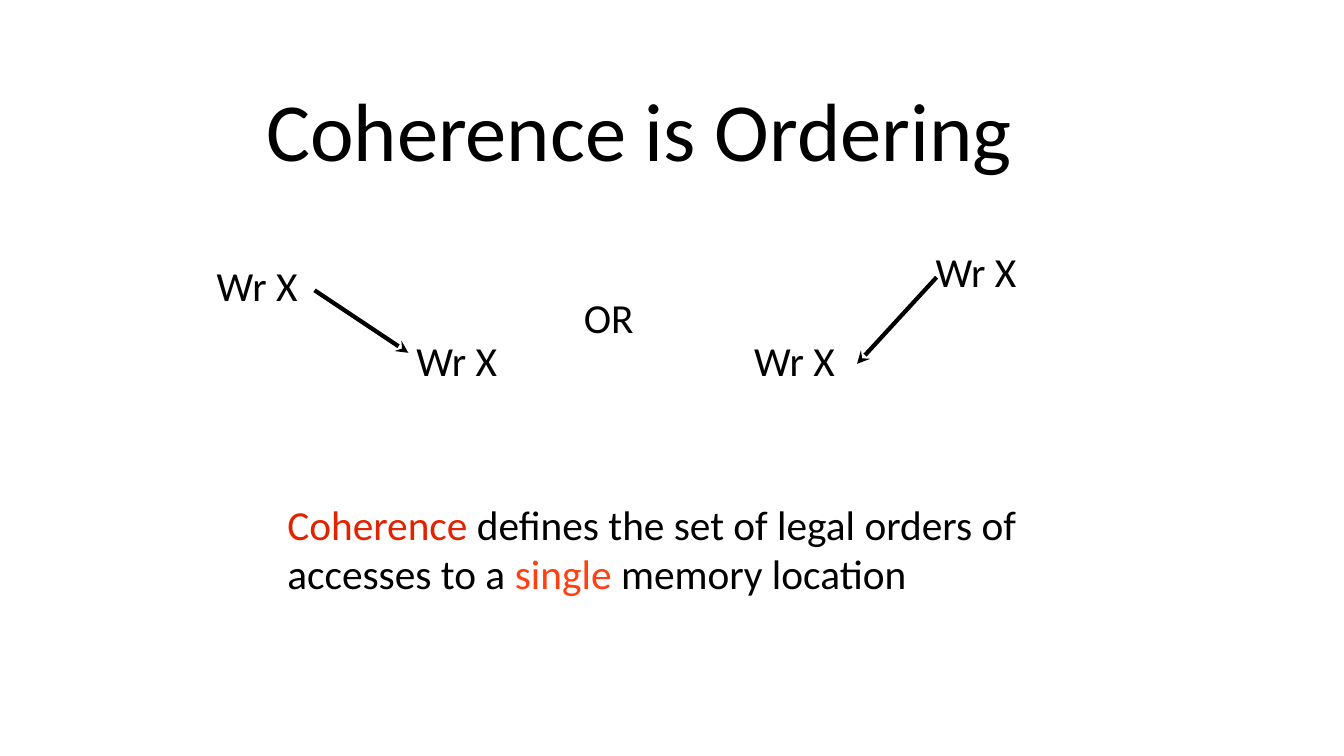
from dataclasses import dataclass

from lxml.etree import SubElement
from pptx import Presentation
from pptx.dml.color import RGBColor
from pptx.enum.shapes import MSO_CONNECTOR as Connector
from pptx.enum.text import MSO_ANCHOR as Anchor, MSO_AUTO_SIZE as AutoSize, PP_ALIGN as Align
from pptx.oxml.ns import qn
from pptx.slide import Slide
from pptx.text.text import TextFrame
from pptx.util import Inches, Pt

COLORS = {"black": "000000", "red": "E22300", "orange": "FF4012"}
FONT = "Calibri"
BODY_SIZE = 29.5


@dataclass
class Label:
    text: str
    left: float
    top: float
    width: float = 0.83


@dataclass
class Arrow:
    start: tuple[float, float]
    end: tuple[float, float]


LABELS = [
    Label("Wr X", 2.14, 2.57),
    Label("Wr X", 4.12, 3.32),
    Label("OR", 5.78, 2.89, 0.52),
    Label("Wr X", 7.47, 3.32),
    Label("Wr X", 9.27, 2.43),
]
ARROWS = [
    Arrow((3.12, 2.88), (4.05, 3.5)),
    Arrow((9.29, 2.75), (8.5, 3.61)),
]
DEFINITION = [
    ("Coherence ", "red"),
    ("defines the set of legal orders of accesses to a ", "black"),
    ("single ", "orange"),
    ("memory location", "black"),
]


def prepare_frame(frame: TextFrame, left: float = 0.01, top: float = 0.01, wrap: bool = True) -> None:
    frame.margin_left, frame.margin_top = Inches(left), Inches(top)
    frame.margin_right = frame.margin_bottom = 0
    frame.auto_size = AutoSize.NONE
    frame.vertical_anchor = Anchor.TOP
    frame.word_wrap = wrap
    frame.paragraphs[0].alignment = Align.LEFT


def add_text(frame: TextFrame, text: str, *, size: float = BODY_SIZE, color: str = "black") -> None:
    """Append a formatted span to the first paragraph."""
    span = frame.paragraphs[0].add_run()
    span.text = text
    span.font.name = FONT
    span.font.size = Pt(size)
    span.font.color.rgb = RGBColor.from_string(COLORS[color])


def add_box(page: Slide, left: float, top: float, width: float, height: float,
            wrap: bool = True) -> TextFrame:
    box = page.shapes.add_textbox(Inches(left), Inches(top), Inches(width), Inches(height))
    prepare_frame(box.text_frame, wrap=wrap)
    return box.text_frame


def add_title(page: Slide, text: str) -> None:
    title = page.shapes.title
    title.left, title.top = Inches(0.16), Inches(0.11)
    title.width, title.height = Inches(13.02), Inches(1.68)
    prepare_frame(title.text_frame, left=2.48, top=0.67)
    add_text(title.text_frame, text, size=59)


def add_arrow(page: Slide, arrow: Arrow) -> None:
    points = [Inches(value) for value in (*arrow.start, *arrow.end)]
    connector = page.shapes.add_connector(Connector.STRAIGHT, *points)
    connector.line.width = Pt(3)
    connector.line.color.rgb = RGBColor.from_string(COLORS["black"])
    SubElement(connector.line._get_or_add_ln(), qn("a:tailEnd"), type="stealth")
    SubElement(connector._element.spPr, qn("a:effectLst"))


def main() -> None:
    deck = Presentation()
    deck.slide_width, deck.slide_height = Inches(13.33), Inches(7.5)
    page = deck.slides.add_slide(deck.slide_layouts[5])

    add_title(page, "Coherence is Ordering")
    for label in LABELS:
        frame = add_box(page, label.left, label.top, label.width, 0.52, wrap=False)
        add_text(frame, label.text)
    for arrow in ARROWS:
        add_arrow(page, arrow)
    definition = add_box(page, 2.84, 4.94, 7.3, 1.01)
    for text, color in DEFINITION:
        add_text(definition, text, color=color)

    deck.save("out.pptx")


if __name__ == "__main__":
    main()
